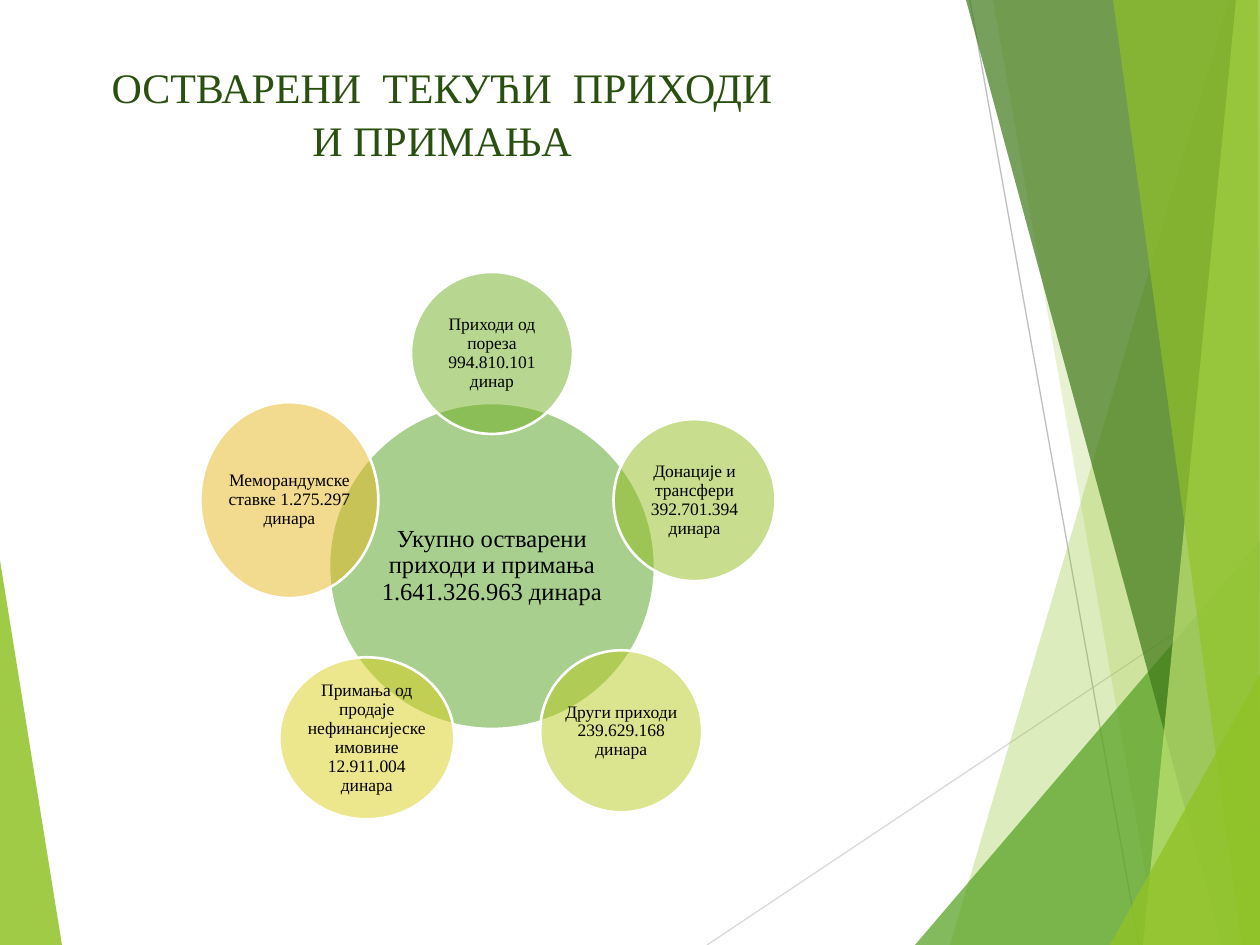
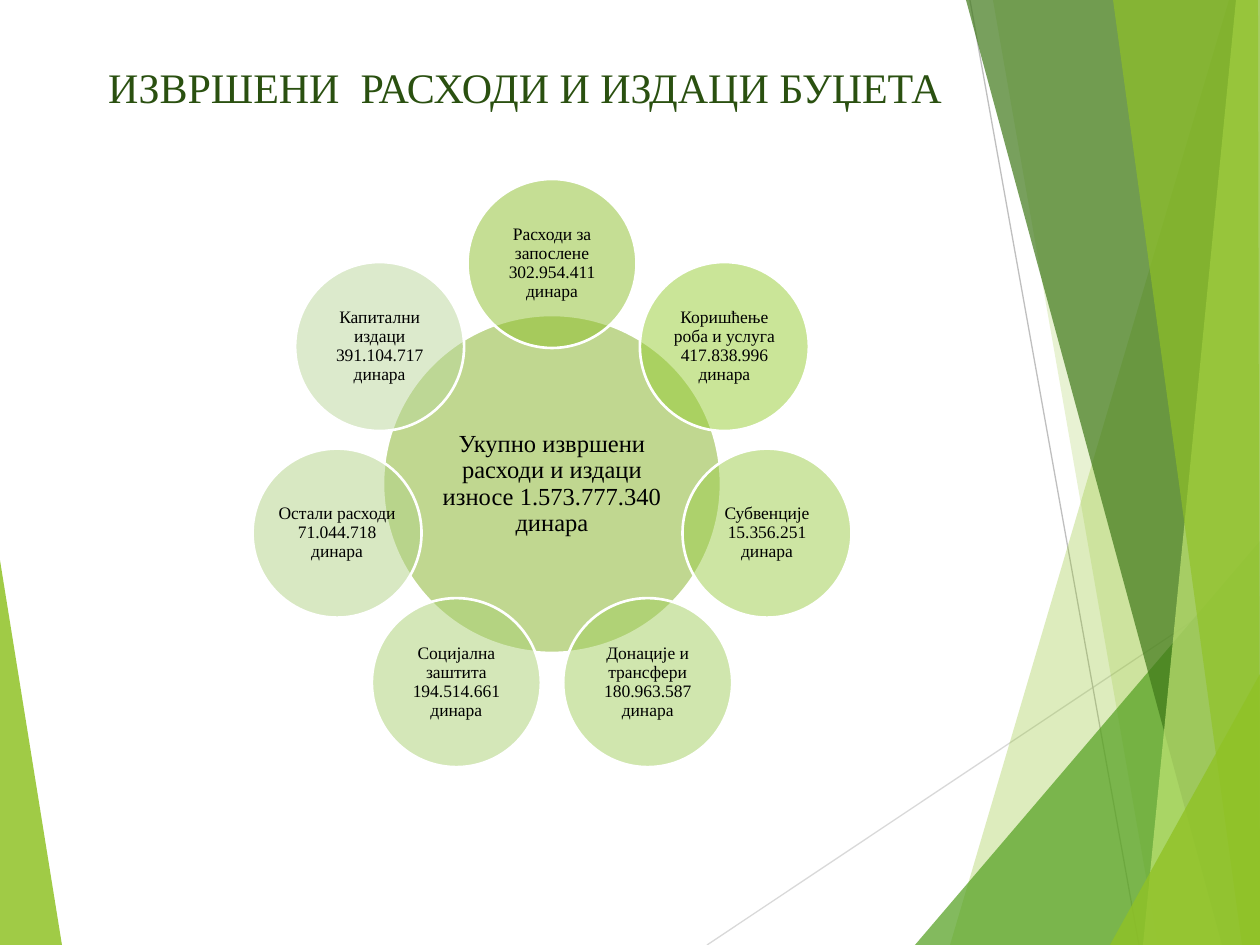
from collections import namedtuple
from math import cos, pi, sin

from lxml.etree import SubElement
from pptx import Presentation
from pptx.dml.color import RGBColor
from pptx.enum.shapes import MSO_CONNECTOR, MSO_SHAPE
from pptx.enum.text import MSO_ANCHOR, MSO_AUTO_SIZE, PP_ALIGN
from pptx.oxml.ns import qn
from pptx.util import Pt

PX = 914400 / 126
WIDTH, HEIGHT = 1260, 945
FONT = "Times New Roman"
TITLE_COLOUR = "2A5010"
TEXT_COLOUR = "000000"
WHITE = "FFFFFF"
GREEN = "90C226"

Box = namedtuple("Box", "left top width height")
Petal = namedtuple("Petal", "text colour width height dx dy", defaults=(None, None, 0, 0))

RAYS = [
    ((707, 945), (1260, 576), "D9D9D9"),
    ((970, 0), (1139, 945), "BFBFBF"),
]
LEFT_FACET = ([(0, 560), (62, 945), (0, 945)], GREEN, 85)
RIGHT_FACETS = [
    ([(1229, 0), (950, 945), (1260, 945), (1260, 0)], GREEN, 30),
    ([(993, 0), (1158, 945), (1260, 945), (1260, 0)], GREEN, 20),
    ([(915, 945), (1260, 541), (1260, 945)], "54A021", 72),
    ([(966, 0), (1222, 945), (1260, 945), (1260, 0)], "3F7819", 70),
    ([(1236, 0), (1143, 945), (1260, 945), (1260, 0)], "C0E474", 70),
    ([(1113, 0), (1242, 945), (1260, 945), (1258, 0)], GREEN, 65),
    ([(1110, 945), (1260, 674), (1260, 945)], GREEN, 80),
]

REVENUE_HUB = Petal("Укупно остварени приходи и примања 1.641.326.963 динара", "54A021")
REVENUE_PETALS = [
    Petal("Приходи од пореза 994.810.101 динар", "71AE20"),
    Petal("Донације и трансфери 392.701.394 динара", "92BC1F"),
    Petal("Други приходи 239.629.168 динара", "B9CB1E", dx=4, dy=-7),
    Petal("Примања од продаје нефинансијеске имовине 12.911.004 динара", "DACF1C", width=175),
    Petal("Меморандумске ставке 1.275.297 динара", "E6B91E", width=178, height=196),
]
EXPENSE_HUB = Petal("Укупно извршени расходи и издаци износе 1.573.777.340 динара", "83B022")
EXPENSE_PETALS = [
    Petal("Расходи за запослене 302.954.411 динара", "8DBF2A"),
    Petal("Коришћење роба и услуга 417.838.996 динара", "96CD33"),
    Petal("Субвенције 15.356.251 динара", "9CCD49"),
    Petal("Донације и трансфери 180.963.587 динара", "A2CE5E"),
    Petal("Социјална заштита 194.514.661 динара", "AAD073"),
    Petal("Остали расходи 71.044.718 динара", "B2D387"),
    Petal("Капитални издаци 391.104.717 динара", "BBD79A"),
]


def emu(pixels):
    return round(pixels * PX)


def rgb(colour):
    return RGBColor.from_string(colour)


def fill_translucent(shape, colour, opacity):
    shape.shadow.inherit = False
    shape.fill.solid()
    shape.fill.fore_color.rgb = rgb(colour)
    colour_element = shape.element.spPr.find(qn("a:solidFill"))[0]
    SubElement(colour_element, qn("a:alpha")).set("val", str(opacity * 1000))


def format_text(text_frame, size, colour, line_spacing):
    for paragraph in text_frame.paragraphs:
        paragraph.alignment = PP_ALIGN.CENTER
        paragraph.line_spacing = line_spacing
        for run in paragraph.runs:
            run.font.name = FONT
            run.font.size = Pt(size)
            run.font.color.rgb = rgb(colour)


def add_facet(slide, points, colour, opacity):
    builder = slide.shapes.build_freeform(*points[0], scale=PX)
    builder.add_line_segments(points[1:])
    facet = builder.convert_to_shape()
    fill_translucent(facet, colour, opacity)
    facet.line.fill.background()
    return facet


def add_ray(slide, start, end, colour):
    ray = slide.shapes.add_connector(
        MSO_CONNECTOR.STRAIGHT, *(emu(value) for value in start + end))
    ray.line.color.rgb = rgb(colour)
    ray.line.width = Pt(0.75)
    SubElement(ray.element.spPr, qn("a:effectLst"))
    return ray


def move_backdrop_to_layout(slide, layout):
    backdrop = [add_facet(slide, *LEFT_FACET)]
    backdrop += [add_ray(slide, *ray) for ray in RAYS]
    backdrop += [add_facet(slide, *facet) for facet in RIGHT_FACETS]
    for number, shape in enumerate(backdrop, 100):
        shape.element.xpath(".//p:cNvPr")[0].set("id", str(number))
        layout.shapes.element.append(shape.element)


def set_title(slide, text, box):
    title = slide.shapes.title
    title.left, title.top, title.width, title.height = (emu(value) for value in box)
    text_frame = title.text_frame
    text_frame.text = text
    text_frame.word_wrap = True
    text_frame.auto_size = MSO_AUTO_SIZE.NONE
    text_frame.vertical_anchor = MSO_ANCHOR.TOP
    format_text(text_frame, 24, TITLE_COLOUR, 1.05)


def add_circle(slide, petal, centre_x, centre_y, diameter, size, inset):
    width, height = petal.width or diameter, petal.height or diameter
    left = centre_x + petal.dx - width / 2
    top = centre_y + petal.dy - height / 2
    circle = slide.shapes.add_shape(
        MSO_SHAPE.OVAL, emu(left), emu(top), emu(width), emu(height))
    fill_translucent(circle, petal.colour, 50)
    circle.line.color.rgb = rgb(WHITE)
    circle.line.width = Pt(1.5)
    text_frame = circle.text_frame
    text_frame.text = petal.text
    text_frame.word_wrap = True
    text_frame.vertical_anchor = MSO_ANCHOR.MIDDLE
    text_frame.margin_left = text_frame.margin_right = emu(inset)
    text_frame.margin_top = text_frame.margin_bottom = emu(inset)
    format_text(text_frame, size, TEXT_COLOUR, 0.9)


def add_radial_diagram(slide, hub, petals, box, hub_diameter, petal_diameter):
    centre_x = box.left + box.width / 2
    centre_y = box.top + box.height / 2
    radius = (box.height - petal_diameter) / 2
    add_circle(slide, hub, centre_x, centre_y, hub_diameter, 14, 2)
    for index, petal in enumerate(petals):
        angle = 2 * pi * index / len(petals)
        add_circle(slide, petal, centre_x + radius * sin(angle),
                   centre_y - radius * cos(angle), petal_diameter, 10, 1)


def main():
    presentation = Presentation()
    presentation.slide_width = emu(WIDTH)
    presentation.slide_height = emu(HEIGHT)
    layout = presentation.slide_layouts[5]

    revenue = presentation.slides.add_slide(layout)
    move_backdrop_to_layout(revenue, layout)
    set_title(revenue, "ОСТВАРЕНИ  ТЕКУЋИ  ПРИХОДИ\vИ ПРИМАЊА", Box(10, 53, 864, 181))
    add_radial_diagram(revenue, REVENUE_HUB, REVENUE_PETALS,
                       Box(198, 272, 588, 588), 326, 162)

    expenses = presentation.slides.add_slide(layout)
    set_title(expenses, "ИЗВРШЕНИ  РАСХОДИ И ИЗДАЦИ БУЏЕТА", Box(10, 53, 1030, 149))
    add_radial_diagram(expenses, EXPENSE_HUB, EXPENSE_PETALS,
                       Box(247, 179, 610, 610), 338, 169)

    presentation.save("out.pptx")


if __name__ == "__main__":
    main()
